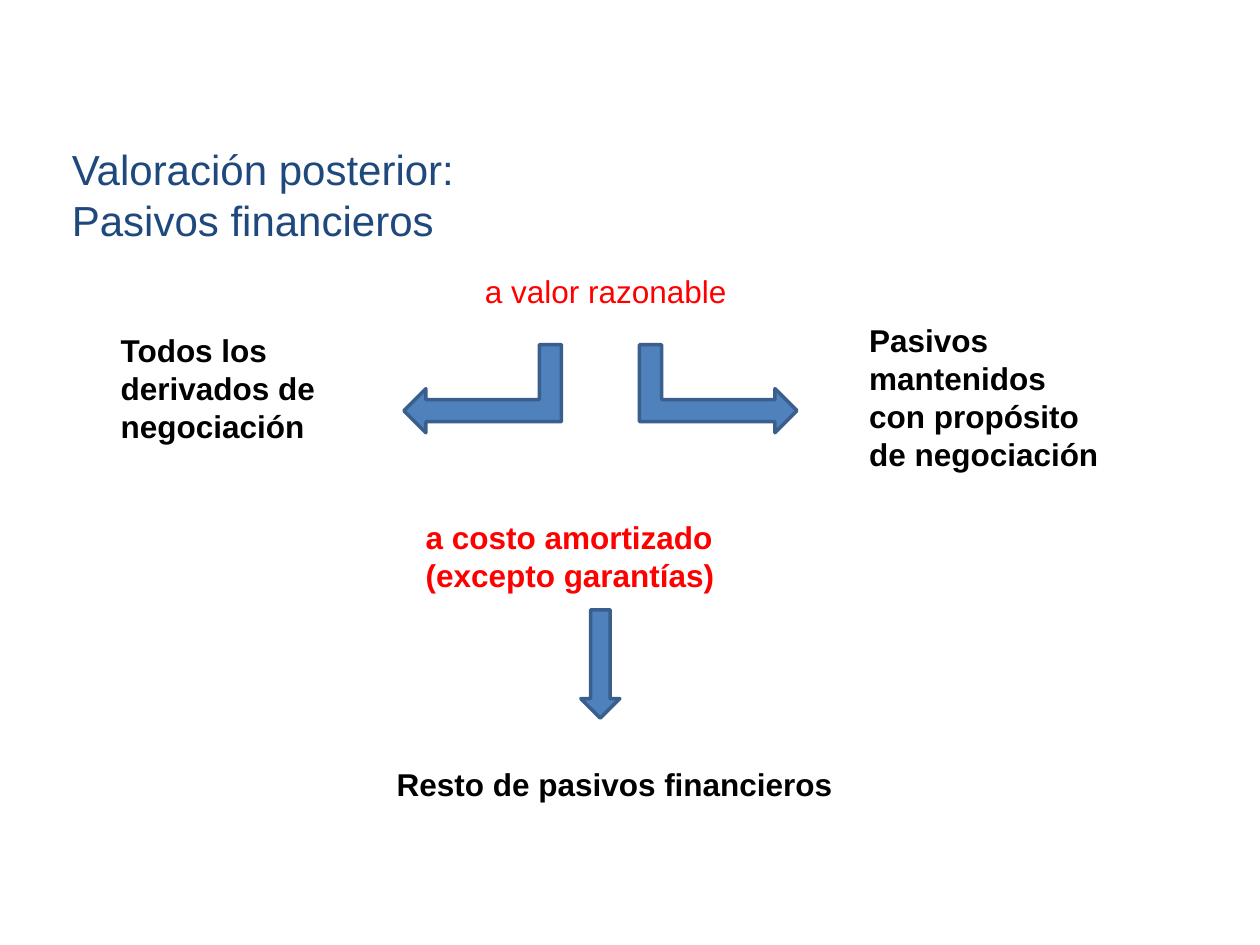
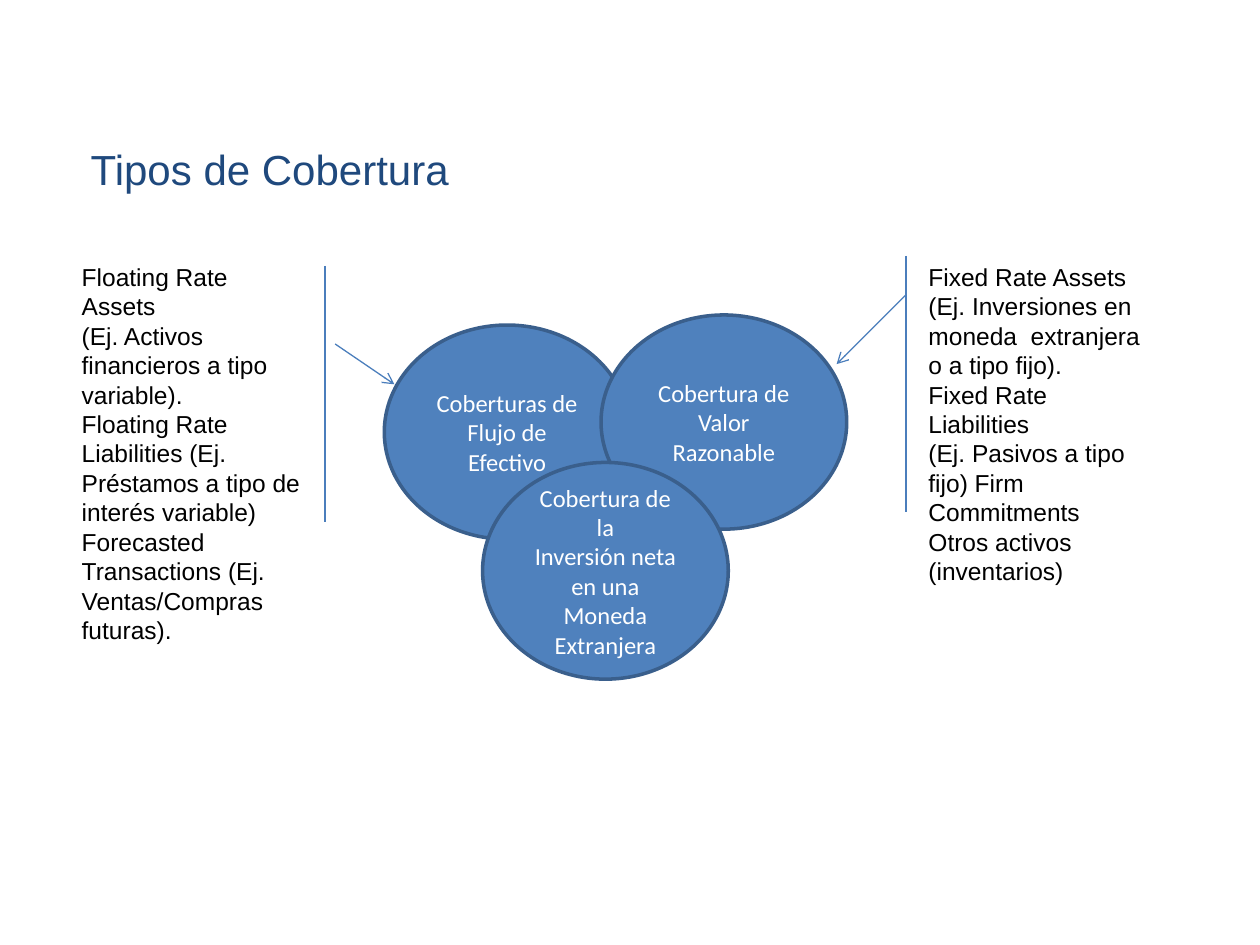
"""Build two slides on the valuation of financial liabilities and hedge types."""
from lxml import etree
from pptx import Presentation
from pptx.dml.color import RGBColor
from pptx.enum.shapes import MSO_CONNECTOR, MSO_SHAPE
from pptx.enum.text import MSO_ANCHOR, MSO_AUTO_SIZE, PP_ALIGN
from pptx.oxml.ns import qn
from pptx.util import Emu, Pt

PX = 9144
WIDTH, HEIGHT = 1000, 750
TITLE_ONLY = 5
BENT_ARROW, DOWN_ARROW = MSO_SHAPE.BENT_UP_ARROW, MSO_SHAPE.DOWN_ARROW
OVAL, STRAIGHT = MSO_SHAPE.OVAL, MSO_CONNECTOR.STRAIGHT
LEFT, CENTER = PP_ALIGN.LEFT, PP_ALIGN.CENTER
TOP, MIDDLE = MSO_ANCHOR.TOP, MSO_ANCHOR.MIDDLE
NO_FIT, GROW = MSO_AUTO_SIZE.NONE, MSO_AUTO_SIZE.SHAPE_TO_FIT_TEXT
COLORS = {
    "title": "1F497D",
    "text": "000000",
    "accent": "FF0000",
    "fill": "4F81BD",
    "outline": "3A5F8C",
    "line": "4B7EBC",
    "on_fill": "FFFFFF",
}


def px(*lengths):
    """Turn px lengths into EMU."""
    return [Emu(length * PX) for length in lengths]


def color(name):
    """Look up a palette colour."""
    return RGBColor.from_string(COLORS[name])


class Deck:
    """Hold the shared style and the current slide."""

    def __init__(self):
        """Open an empty presentation."""
        self.prs = Presentation()
        self.prs.slide_width, self.prs.slide_height = px(WIDTH, HEIGHT)
        self.slide = None

    def fill_frame(self, frame, lines, size, ink, font="Arial", bold=False,
                   align=LEFT, anchor=TOP, fit=NO_FIT):
        """Fill a text frame, one paragraph per line."""
        frame.text = "\n".join(lines)
        frame.word_wrap = True
        frame.auto_size = fit
        frame.vertical_anchor = anchor
        for paragraph in frame.paragraphs:
            paragraph.alignment = align
            paragraph.font.name = font
            paragraph.font.size = Pt(size)
            paragraph.font.bold = bold
            paragraph.font.color.rgb = color(ink)

    def add_slide(self, left, height, *lines):
        """Start a slide with its title."""
        self.slide = self.prs.slides.add_slide(self.prs.slide_layouts[TITLE_ONLY])
        title = self.slide.shapes.title
        title.left, title.top, title.width, title.height = px(left, 109, 875, height)
        self.fill_frame(title.text_frame, lines, 24, "title")

    def text(self, box, lines, size=18, ink="text", bold=True):
        """Add a text box that grows with its text."""
        frame = self.slide.shapes.add_textbox(*px(*box)).text_frame
        self.fill_frame(frame, lines, size, ink, bold=bold, fit=GROW)

    def shape(self, kind, box, rotation=0, flipped=False):
        """Add a filled and outlined preset shape."""
        shape = self.slide.shapes.add_shape(kind, *px(*box))
        shape.shadow.inherit = False
        shape.fill.solid()
        shape.fill.fore_color.rgb = color("fill")
        shape.line.color.rgb = color("outline")
        shape.line.width = Pt(2)
        shape.rotation = rotation
        if flipped:
            shape.element.spPr.xfrm.set("flipV", "1")
        return shape

    def oval(self, box, lines):
        """Add a labelled ellipse."""
        frame = self.shape(OVAL, box).text_frame
        self.fill_frame(frame, lines, 14, "on_fill", "Calibri",
                        align=CENTER, anchor=MIDDLE)

    def line(self, ends, arrow=False):
        """Add a thin line, optionally with an arrowhead at its end."""
        connector = self.slide.shapes.add_connector(STRAIGHT, *px(*ends))
        connector.line.color.rgb = color("line")
        connector.line.width = Pt(0.75)
        properties = connector.element.spPr
        if arrow:
            etree.SubElement(properties.find(qn("a:ln")), qn("a:tailEnd"), type="arrow")
        etree.SubElement(properties, qn("a:effectLst"))


def build_liabilities(deck):
    """Show how financial liabilities are measured."""
    deck.add_slide(47, 91, "Valoración posterior:", "Pasivos financieros")
    deck.text((375, 211, 234, 40), ["a valor razonable"], ink="accent", bold=False)
    deck.text((86, 258, 195, 101), ["Todos los derivados de negociación"])
    deck.text((680, 250, 211, 131),
              ["Pasivos", "mantenidos con propósito de negociación"])
    for left, flipped in ((535, False), (348, True)):
        deck.shape(BENT_ARROW, (left, 246, 70, 125), 90, flipped)
    deck.text((328, 406, 266, 71),
              ["a costo amortizado", "(excepto garantías)"], ink="accent")
    deck.shape(DOWN_ARROW, (461, 484, 31, 86))
    deck.text((305, 602, 367, 40), ["Resto de pasivos financieros"])


def build_hedges(deck):
    """Show the hedge types and the items they cover."""
    deck.add_slide(62, 51, "Tipos de Cobertura")
    floating_rate = [
        "Floating Rate Assets",
        "(Ej. Activos financieros a tipo variable).",
        "Floating Rate Liabilities (Ej. Préstamos a tipo de interés variable) "
        "Forecasted Transactions (Ej. Ventas/Compras futuras).",
    ]
    fixed_rate = [
        "Fixed Rate Assets",
        "(Ej. Inversiones en moneda  extranjera o a tipo fijo).",
        "Fixed Rate Liabilities",
        "(Ej. Pasivos a tipo fijo) Firm Commitments",
        "Otros activos (inventarios)",
    ]
    for left, height, items in ((55, 316, floating_rate), (727, 269, fixed_rate)):
        deck.text((left, 203, 195, height), items, size=14, bold=False)

    hedges = (
        (305, 258, 170, ["Coberturas de", "Flujo de Efectivo"]),
        (477, 250, 170, ["Cobertura de", "Valor Razonable"]),
        (383, 367, 172, ["Cobertura de la", "Inversión neta en una", "Moneda Extranjera"]),
    )
    for left, top, height, label in hedges:
        deck.oval((left, top, 195, height), label)

    for x, top in ((258, 211), (719, 203)):
        deck.line((x, top, x, top + 203))
    for ends in ((266, 273, 313, 305), (719, 234, 664, 289)):
        deck.line(ends, arrow=True)


def main():
    """Build and save the presentation."""
    deck = Deck()
    build_liabilities(deck)
    build_hedges(deck)
    deck.prs.save("out.pptx")


if __name__ == "__main__":
    main()
